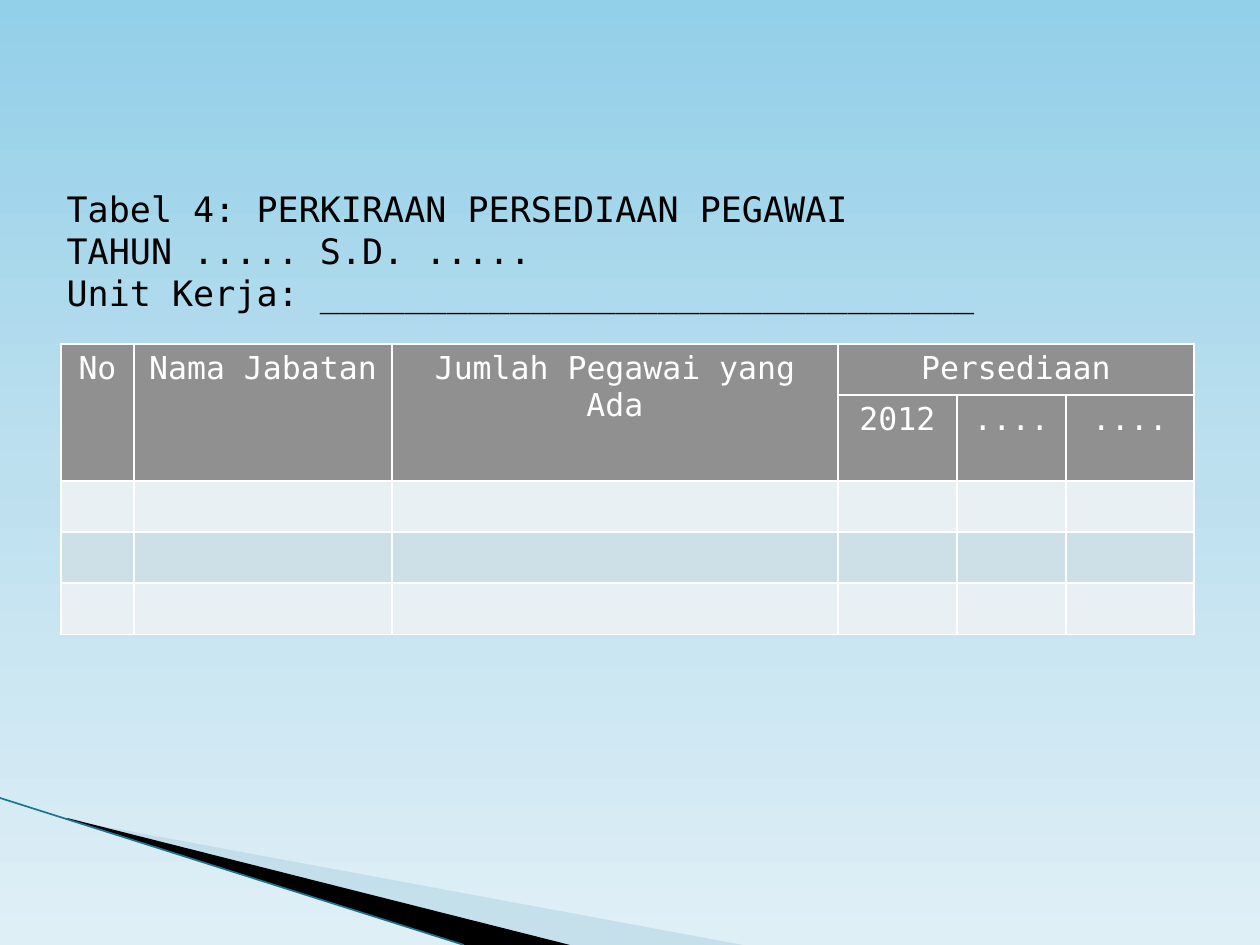
from collections import namedtuple
from copy import deepcopy

from lxml import etree
from pptx import Presentation
from pptx import util as u
from pptx.dml.color import RGBColor
from pptx.enum import shapes, text
from pptx.oxml import ns

Box = namedtuple("Box", "left top width height")

SCALE = 914400 / 126
FONT = "DejaVu Sans Mono"
BLACK = RGBColor(0x00, 0x00, 0x00)
WHITE = RGBColor(0xFF, 0xFF, 0xFF)
GREY = RGBColor(0x90, 0x90, 0x90)
PALE = RGBColor(0xE8, 0xF0, 0xF4)
MIST = RGBColor(0xCD, 0xE0, 0xE8)
WING = RGBColor(0xA0, 0xCB, 0xDC)
TEAL = RGBColor(0x1B, 0x75, 0x90)
SKY = [
    RGBColor(0x92, 0xCF, 0xE8),
    RGBColor(0xBD, 0xE0, 0xEF),
    RGBColor(0xDF, 0xEF, 0xF6),
]

TITLE = [
    "Tabel 4: PERKIRAAN PERSEDIAAN PEGAWAI",
    "TAHUN ..... S.D. .....",
    "Unit Kerja: " + "_" * 31,
]
COLUMNS = [73, 258, 446, 119, 109, 128]
ROWS = [51, 86, 51, 51, 51]
HEADERS = {
    (0, 0): "No",
    (0, 1): "Nama Jabatan",
    (0, 2): "Jumlah Pegawai yang Ada",
    (0, 3): "Persediaan",
    (1, 3): "2012",
    (1, 4): "....",
    (1, 5): "....",
}
MERGES = [((0, col), (1, col)) for col in range(3)] + [((0, 3), (0, 5))]


def px(length):
    """Turn pixels into EMU."""
    return u.Emu(round(length * SCALE))


def assign(target, values):
    """Set the attributes of an object from a dict."""
    for name, value in values.items():
        setattr(target, name, value)


def format_para(para, size, color, align):
    """Set the font and alignment of a paragraph."""
    assign(para, {"alignment": align, "space_before": u.Pt(0)})
    assign(para.font, {"name": FONT, "size": u.Pt(size)})
    para.font.color.rgb = color


def paint_background(page):
    """Fill the page with a three-colour vertical gradient."""
    fill = page.background.fill
    fill.gradient()
    fill.gradient_angle = 270
    stops = page._element.find(".//" + ns.qn("a:gsLst"))
    stops.insert(1, deepcopy(stops[0]))
    for index, (stop, color) in enumerate(zip(fill.gradient_stops, SKY)):
        stop.position = index / 2
        stop.color.rgb = color


def add_wedge(page, box, points, color):
    """Draw a filled outline whose points are relative to the box."""
    corners = [(box.left + x, box.top + y) for x, y in points]
    builder = page.shapes.build_freeform(*corners[0], scale=SCALE)
    builder.add_line_segments(corners[1:], close=True)
    wedge = builder.convert_to_shape()
    wedge.shadow.inherit = False
    wedge.fill.solid()
    wedge.fill.fore_color.rgb = color
    wedge.line.fill.background()
    return wedge


def draw_corner(page, box):
    """Draw the two wedges and the slanted line in the lower corner."""
    wing = add_wedge(page, box, [(69, 22), (743, 147), (570, 147), (69, 21)], WING)
    color = wing._element.find(".//" + ns.qn("a:srgbClr"))
    etree.SubElement(color, ns.qn("a:alpha"), val="40000")
    add_wedge(page, box, [(67, 20), (570, 147), (464, 147), (68, 21)], BLACK)
    edge = page.shapes.add_connector(
        shapes.MSO_CONNECTOR.STRAIGHT,
        px(box.left), px(box.top), px(box.left + 464), px(box.top + box.height),
    )
    edge.line.color.rgb = TEAL
    edge.line.width = u.Pt(0.95)
    etree.SubElement(edge._element.spPr, ns.qn("a:effectLst"))


def place_title(page, box):
    """Move and format the title placeholder."""
    title = page.shapes.title
    assign(title, {name: px(value) for name, value in box._asdict().items()})
    frame = title.text_frame
    frame.text = "\n".join(TITLE)
    assign(frame, {
        "word_wrap": True,
        "auto_size": text.MSO_AUTO_SIZE.NONE,
        "vertical_anchor": text.MSO_ANCHOR.TOP,
    })
    for para in frame.paragraphs:
        format_para(para, 20, BLACK, text.PP_ALIGN.LEFT)


def style_cell(cell, color):
    """Give a cell its white borders and its fill."""
    properties = cell._tc.get_or_add_tcPr()
    for side in ("lnL", "lnR", "lnT", "lnB"):
        border = etree.SubElement(properties, ns.qn("a:" + side), w=str(u.Pt(1)))
        fill = etree.SubElement(border, ns.qn("a:solidFill"))
        etree.SubElement(fill, ns.qn("a:srgbClr"), val=str(WHITE))
    cell.fill.solid()
    cell.fill.fore_color.rgb = color


def place_table(page, box):
    """Build the staff supply table with its two-row header."""
    table = page.shapes.add_table(
        len(ROWS), len(COLUMNS), *[px(value) for value in box]
    ).table
    for column, width in zip(table.columns, COLUMNS):
        column.width = px(width)
    for row, height in zip(table.rows, ROWS):
        row.height = px(height)
    for index, row in enumerate(table.rows):
        for cell in row.cells:
            style_cell(cell, GREY if index < 2 else (PALE, MIST)[index % 2])
    for start, end in MERGES:
        table.cell(*start).merge(table.cell(*end))
    for place, words in HEADERS.items():
        frame = table.cell(*place).text_frame
        frame.text = words
        format_para(frame.paragraphs[0], 18, WHITE, text.PP_ALIGN.CENTER)


def main():
    """Build the slide and save it."""
    deck = Presentation()
    assign(deck, {"slide_width": px(1260), "slide_height": px(945)})
    page = deck.slides.add_slide(deck.slide_layouts[5])
    paint_background(page)
    draw_corner(page, Box(0, 798, 743, 147))
    place_table(page, Box(61, 344, sum(COLUMNS), sum(ROWS)))
    place_title(page, Box(54, 181, 1142, 150))
    deck.save("out.pptx")


if __name__ == "__main__":
    main()
